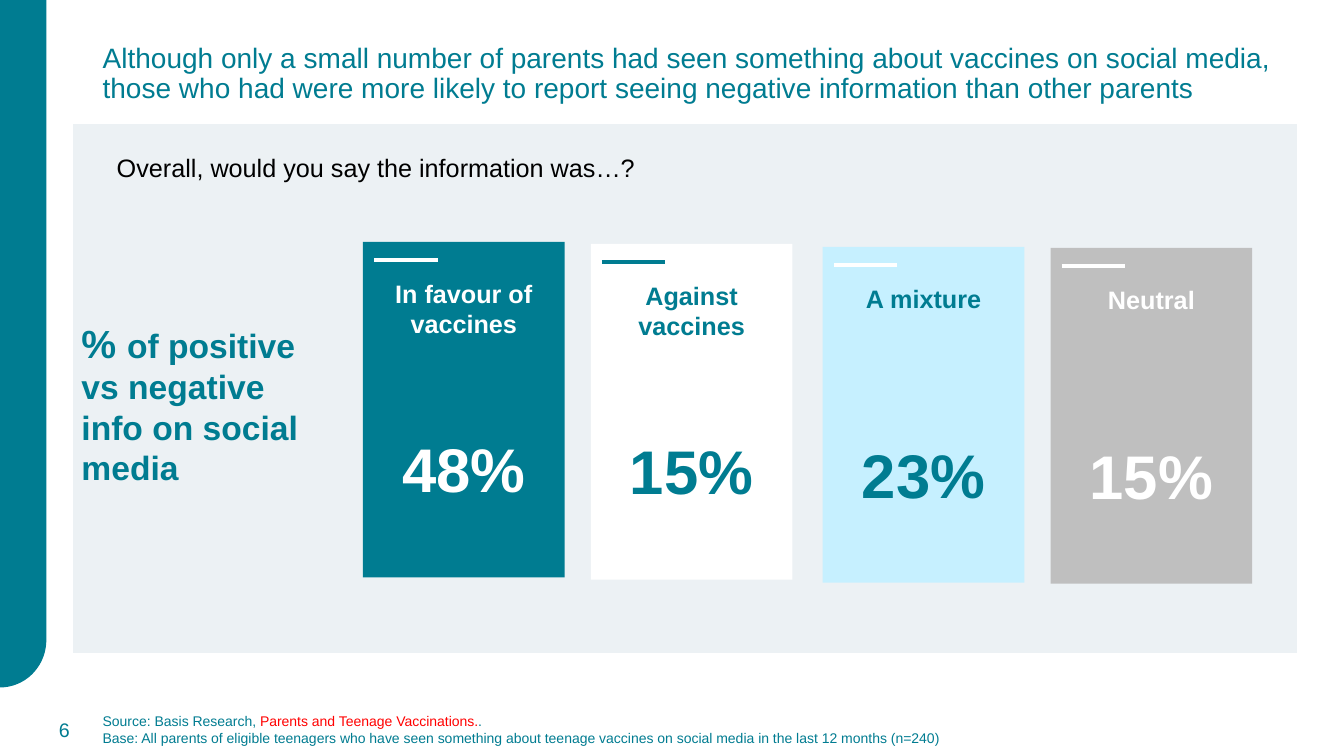
"""Build the slide on how parents judged vaccine information on social media."""
import math
from dataclasses import dataclass

from lxml import etree
from pptx import Presentation
from pptx.dml.color import RGBColor
from pptx.enum import shapes, text
from pptx.oxml import ns
from pptx.util import Inches, Pt


@dataclass(frozen=True)
class Theme:
    font: str = "Arial"
    teal: RGBColor = RGBColor(0x00, 0x7C, 0x91)
    panel: RGBColor = RGBColor(0xEC, 0xF1, 0xF4)
    sky: RGBColor = RGBColor(0xC6, 0xF0, 0xFF)
    grey: RGBColor = RGBColor(0xBF, 0xBF, 0xBF)
    white: RGBColor = RGBColor(0xFF, 0xFF, 0xFF)
    black: RGBColor = RGBColor(0x00, 0x00, 0x00)
    red: RGBColor = RGBColor(0xFF, 0x00, 0x00)
    note: int = 10
    number: int = 14
    body: int = 18
    title: int = 20
    side: int = 24
    percent: int = 28
    value: int = 44


theme = Theme()


def style(font, size, color, bold=False):
    font.name, font.size, font.bold = theme.font, Pt(size), bold
    font.color.rgb = color


def add_text(page, place, lines, size, color, bold=False, anchor=text.MSO_ANCHOR.MIDDLE):
    box = page.shapes.add_textbox(*map(Inches, place))
    frame = box.text_frame
    frame.word_wrap = True
    frame.vertical_anchor = anchor
    for index, line in enumerate(lines):
        para = frame.paragraphs[0] if index == 0 else frame.add_paragraph()
        style(para.font, size, color, bold)
        for words in line:
            para.add_run().text = words
    return frame.paragraphs


deck = Presentation()
deck.slide_width, deck.slide_height = Inches(13.33), Inches(7.5)
page = deck.slides.add_slide(deck.slide_layouts[6])

band_width, band_bottom, curve_height = 0.46, 6.35, 0.47
curve = []
for degrees in range(0, 91, 3):
    angle = math.radians(degrees)
    curve.append((Inches(band_width * math.cos(angle)),
                  Inches(band_bottom + curve_height * math.sin(angle))))
outline = page.shapes.build_freeform(0, 0)
outline.add_line_segments([(Inches(band_width), 0), *curve], close=True)
band = outline.convert_to_shape()
band.shadow.inherit = False
band.fill.solid()
band.fill.fore_color.rgb = theme.teal
band.line.fill.background()

headline = add_text(page, (0.92, 0.01, 11.96, 1.45), [[
    "Although only a small number of parents had seen something about vaccines on "
    "social media, those who had were more likely to report seeing negative "
    "information than other parents"]], theme.title, theme.teal)
headline[0].line_spacing = 0.9

source = add_text(page, (0.92, 7.04, 11.6, 0.4), [
    ["Source: Basis Research, ", "Parents and Teenage Vaccinations.", "."],
    ["Base: All parents of eligible teenagers who have seen something about teenage "
     "vaccines on social media in the last 12 months (n=240)"]], theme.note, theme.teal)
source[0].runs[1].font.color.rgb = theme.red

page_number = add_text(page, (0.14, 7.04, 0.65, 0.4), [["6"]], theme.number, theme.teal)
page_number[0].alignment = text.PP_ALIGN.RIGHT

panel = page.shapes.add_shape(shapes.MSO_SHAPE.RECTANGLE,
                              *map(Inches, (0.71, 1.22, 12.17, 5.27)))
panel.shadow.inherit = False
panel.fill.solid()
panel.fill.fore_color.rgb = theme.panel
panel.line.color.rgb = theme.white
panel.line.width = Pt(1.5)

side = add_text(page, (0.71, 3.11, 2.7, 1.78),
                [["% ", "of positive vs negative info on social media"]],
                theme.side, theme.teal, bold=True)
side[0].runs[0].font.size = Pt(theme.percent)

add_text(page, (1.06, 1.46, 5.6, 0.4), [["Overall, would you say the information was…?"]],
         theme.body, theme.black, anchor=text.MSO_ANCHOR.TOP)

cards = [
    ("In favour of vaccines", "48%", 3.6, 2.4, theme.teal, theme.white, theme.white, 66),
    ("Against vaccines", "15%", 5.86, 2.42, theme.white, theme.teal, theme.teal, 66),
    ("A mixture", "23%", 8.16, 2.45, theme.sky, theme.teal, theme.white, 88),
    ("Neutral", "15%", 10.42, 2.46, theme.grey, theme.white, theme.white, 88),
]
for label, value, left, top, fill, ink, accent, gap in cards:
    card = page.shapes.add_shape(shapes.MSO_SHAPE.RECTANGLE,
                                 *map(Inches, (left, top, 2, 3.33)))
    card.shadow.inherit = False
    card.fill.solid()
    card.fill.fore_color.rgb = fill
    card.line.fill.background()
    frame = card.text_frame
    frame.word_wrap = True
    frame.vertical_anchor = text.MSO_ANCHOR.TOP
    frame.margin_top = Inches(0.36)
    for para, words, size in ((frame.paragraphs[0], label, theme.body),
                              (frame.add_paragraph(), value, theme.value)):
        para.text = words
        para.alignment = text.PP_ALIGN.CENTER
        style(para.font, size, ink, bold=True)
    frame.paragraphs[1].space_before = Pt(gap)

    rule = page.shapes.add_connector(
        shapes.MSO_CONNECTOR.STRAIGHT, Inches(left + 0.11), Inches(top + 0.18),
        Inches(left + 0.74), Inches(top + 0.18))
    rule.line.color.rgb = accent
    rule.line.width = Pt(3)
    etree.SubElement(rule._element.spPr, ns.qn("a:effectLst"))

deck.save("out.pptx")
